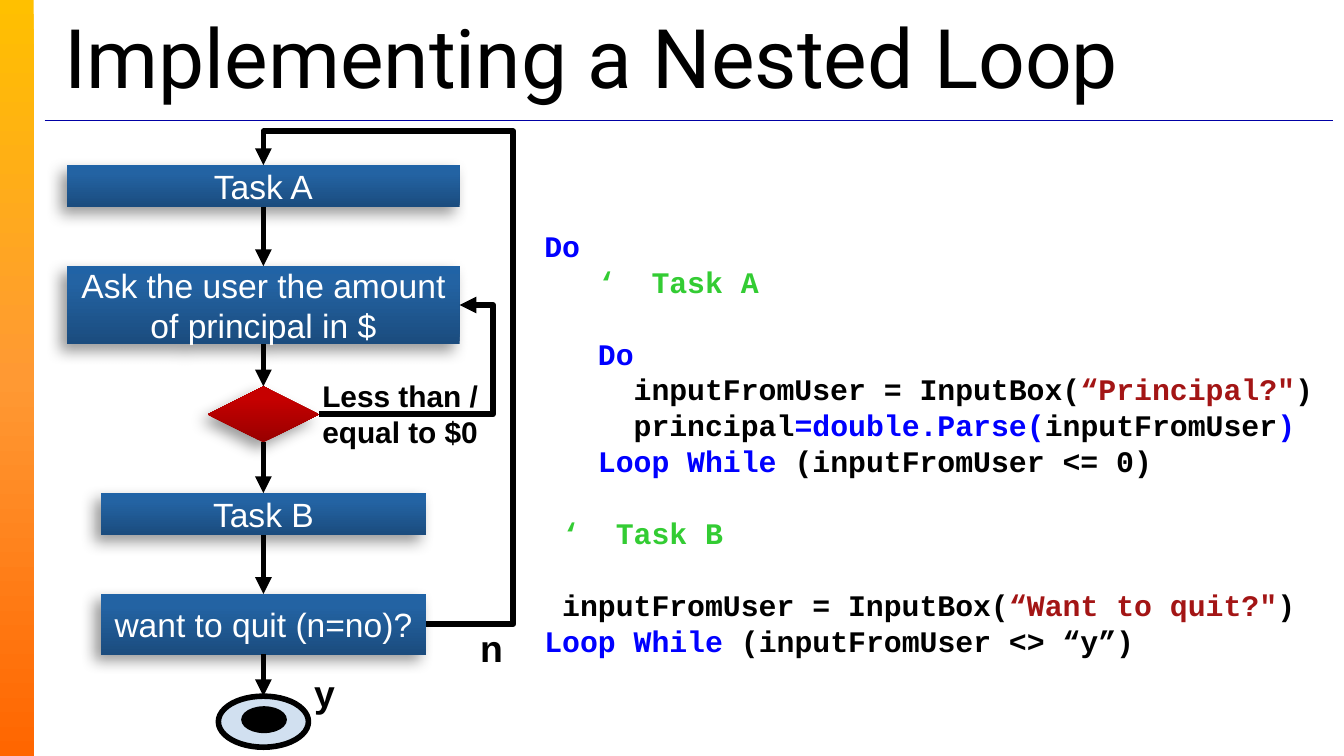
from dataclasses import dataclass
from typing import Optional

from lxml.etree import SubElement
from pptx import Presentation
from pptx.dml.color import RGBColor
from pptx.enum.shapes import MSO_CONNECTOR as Conn, MSO_SHAPE as Shape
from pptx.enum.text import MSO_ANCHOR as Anchor, MSO_AUTO_SIZE as Auto, PP_ALIGN as Align
from pptx.oxml.ns import qn
from pptx.util import Inches, Pt

BLUE = [(0, "1B4C7E"), (80, "2363A3"), (100, "2063A6")]
RED = [(0, "980000"), (80, "C60000"), (100, "C70000")]
ORANGE = [(0, "FFC000"), (50, "FF9933"), (100, "FF6600")]
BLACK, WHITE = "000000", "FFFFFF"
KEYWORD, COMMENT, STRING = "0000FF", "33CC33", "A31515"
AXIS = 19.6  # centre line of the flowchart
CODE_PITCH = 19.22

prs = Presentation()
prs.slide_width = Inches(10)
prs.slide_height = prs.slide_width * 9 // 16
slide = prs.slides.add_slide(prs.slide_layouts[5])
shapes = slide.shapes


@dataclass
class Node:
    kind: Shape
    top: float
    width: float
    height: float
    text: str = ""
    stops: Optional[list] = None

    @property
    def bottom(self) -> float:
        return self.top + self.height

    @property
    def middle(self) -> float:
        return self.top + self.height / 2

    @property
    def left(self) -> float:
        return AXIS - self.width / 2

    @property
    def right(self) -> float:
        return AXIS + self.width / 2


@dataclass
class Label:
    text: str
    box: tuple
    size: int
    align: Align


def share(*values: float) -> list:
    """Turn percentages of the slide width into lengths."""
    return [int(prs.slide_width * v / 100) for v in values]


def rgb(color: str) -> RGBColor:
    return RGBColor.from_string(color)


def apply(target, **values) -> None:
    for name, value in values.items():
        setattr(target, name, value)


def style(font, color: str, size: float, name: str = "Arial", bold: bool = False) -> None:
    apply(font, name=name, size=Pt(size), bold=bold)
    font.color.rgb = rgb(color)


def gradient(s, stops: list, angle: int) -> None:
    s.fill.gradient()
    fill = s._element.spPr.find(qn("a:gradFill"))
    gs_list = fill.find(qn("a:gsLst"))
    gs_list.clear()
    for pos, color in stops:
        gs = SubElement(gs_list, qn("a:gs"), pos=str(pos * 1000))
        SubElement(gs, qn("a:srgbClr"), val=color)
    fill.find(qn("a:lin")).set("ang", str(angle * 60000))


def cast_shadow(s) -> None:
    effects = s._element.spPr.find(qn("a:effectLst"))
    shadow = SubElement(effects, qn("a:outerShdw"), blurRad=str(Pt(8)), dist=str(Pt(5)),
                        dir=str(135 * 60000), algn="tr", rotWithShape="0")
    color = SubElement(shadow, qn("a:srgbClr"), val=BLACK)
    SubElement(color, qn("a:alpha"), val="40000")


def add_shape(kind: Shape, box: tuple, fill: str = "", line: float = 0):
    s = shapes.add_shape(kind, *share(*box))
    s.shadow.inherit = False
    if fill:
        s.fill.solid()
        s.fill.fore_color.rgb = rgb(fill)
    if line:
        s.line.width = Pt(line)
        s.line.color.rgb = rgb(BLACK)
    else:
        s.line.fill.background()
    return s


def add_node(node: Node) -> None:
    s = add_shape(node.kind, (node.left, node.top, node.width, node.height))
    gradient(s, node.stops, 270)
    cast_shadow(s)
    if node.text:
        tf = s.text_frame
        inset = Inches(0.05)
        apply(tf, word_wrap=True, vertical_anchor=Anchor.MIDDLE, margin_left=inset,
              margin_right=inset, margin_top=inset, margin_bottom=inset)
        p = tf.paragraphs[0]
        p.text, p.alignment = node.text, Align.CENTER
        style(p.runs[0].font, WHITE, 18)


def add_line(start: tuple, end: tuple, color: str = BLACK, width: float = 3,
             arrow: bool = True, bends: tuple = ()) -> None:
    """Draw a straight line, or an elbow whose legs turn at the x, then y, in bends."""
    c = shapes.add_connector(Conn.ELBOW if bends else Conn.STRAIGHT, *share(*start, *end))
    c.line.width = Pt(width)
    c.line.color.rgb = rgb(color)
    sp_pr = c._element.spPr
    if bends:
        geom = sp_pr.find(qn("a:prstGeom"))
        geom.set("prst", f"bentConnector{len(bends) + 2}")
        guides = geom.find(qn("a:avLst"))
        for i, (turn, a, b) in enumerate(zip(bends, start, end), 1):
            SubElement(guides, qn("a:gd"), name=f"adj{i}",
                       fmla=f"val {round((turn - a) / (b - a) * 100000)}")
    if arrow:
        SubElement(sp_pr.find(qn("a:ln")), qn("a:tailEnd"), type="triangle")
    SubElement(sp_pr, qn("a:effectLst"))


def add_label(label: Label) -> None:
    tf = shapes.add_textbox(*share(*label.box)).text_frame
    tf.word_wrap = True
    p = tf.paragraphs[0]
    p.text, p.alignment = label.text, label.align
    style(p.runs[0].font, BLACK, label.size, bold=True)


# Side band, rule and title
gradient(add_shape(Shape.RECTANGLE, (0, 0, 2.5, 56.25)), ORANGE, 90)
add_line((3.33, 8.96), (99.2, 8.96), "0000A5", 0.75, arrow=False)
title = shapes.title
apply(title, **dict(zip(("left", "top", "width", "height"), share(3.8, 1.5, 95.8, 5.3))))
apply(title.text_frame, word_wrap=True, auto_size=Auto.NONE, vertical_anchor=Anchor.MIDDLE)
p = title.text_frame.paragraphs[0]
p.text, p.alignment = "Implementing a Nested Loop", Align.LEFT
style(p.runs[0].font, BLACK, 44, "Roboto")

# Flowchart, top to bottom
PROCESS = Shape.FLOWCHART_PROCESS
task_a = Node(PROCESS, 12.3, 29.2, 3.1, "Task A", BLUE)
ask = Node(PROCESS, 19.8, 29.2, 5.8, "Ask the user the amount of principal in $", BLUE)
check = Node(Shape.FLOWCHART_DECISION, 28.75, 8.3, 4.17, "", RED)
task_b = Node(PROCESS, 36.7, 24.2, 3.1, "Task B", BLUE)
quit_box = Node(PROCESS, 44.2, 24.2, 4.5, "want to quit (n=no)?", BLUE)
finish = Node(Shape.OVAL, 51.8, 6.7, 3.8)
steps = [task_a, ask, check, task_b, quit_box, finish]
for node in steps[:-1]:
    add_node(node)
for upper, lower in zip(steps, steps[1:]):
    add_line((AXIS, upper.bottom), (AXIS, lower.top))
add_shape(Shape.OVAL, (finish.left, finish.top, finish.width, finish.height), "D1E0F0", 3)
add_shape(Shape.OVAL, (AXIS - 1.6, 52.6, 3.3, 1.9), BLACK, 0.75)

# Loops back and branch labels
add_line((check.right, check.middle), (ask.right, ask.middle), bends=(36.7,))
add_line((quit_box.right, quit_box.middle), (AXIS, task_a.top), bends=(38.2, 9.78))
for label in (Label("Less than / equal to $0", (23, 27.6, 14.5, 6.4), 16, Align.LEFT),
              Label("n", (31.7, 46, 6.7, 4.4), 20, Align.RIGHT),
              Label("y", (19.2, 49.4, 6.7, 4.4), 20, Align.RIGHT)):
    add_label(label)

# Code: blank lines above, then coloured pieces
CODE = [
    (0, [("Do", KEYWORD)]),
    (0, [("   ‘  Task A", COMMENT)]),
    (1, [("   Do", KEYWORD)]),
    (0, [("     inputFromUser = InputBox(", BLACK), ("“Principal?\"", STRING), (")", BLACK)]),
    (0, [("     principal", BLACK), ("=double.Parse(", KEYWORD), ("inputFromUser", BLACK),
         (")", KEYWORD)]),
    (0, [("   Loop While", KEYWORD), (" (inputFromUser <= 0)", BLACK)]),
    (1, [(" ‘  Task B", COMMENT)]),
    (1, [(" inputFromUser = InputBox(", BLACK), ("“Want to quit?\"", STRING), (")", BLACK)]),
    (0, [("Loop While", KEYWORD), (" (inputFromUser <> “y”)", BLACK)]),
]
tf = shapes.add_textbox(*share(40.5, 11.6, 59.2, 37.7)).text_frame
apply(tf, word_wrap=True, margin_left=0, margin_right=0, margin_bottom=0,
      margin_top=Pt(2 * CODE_PITCH))
for i, (gap, pieces) in enumerate(CODE):
    p = tf.add_paragraph() if i else tf.paragraphs[0]
    apply(p, line_spacing=Pt(CODE_PITCH), space_before=Pt(gap * CODE_PITCH))
    for text, color in pieces:
        r = p.add_run()
        r.text = text
        style(r.font, color, 16, "Courier New", bold=True)

prs.save("out.pptx")
